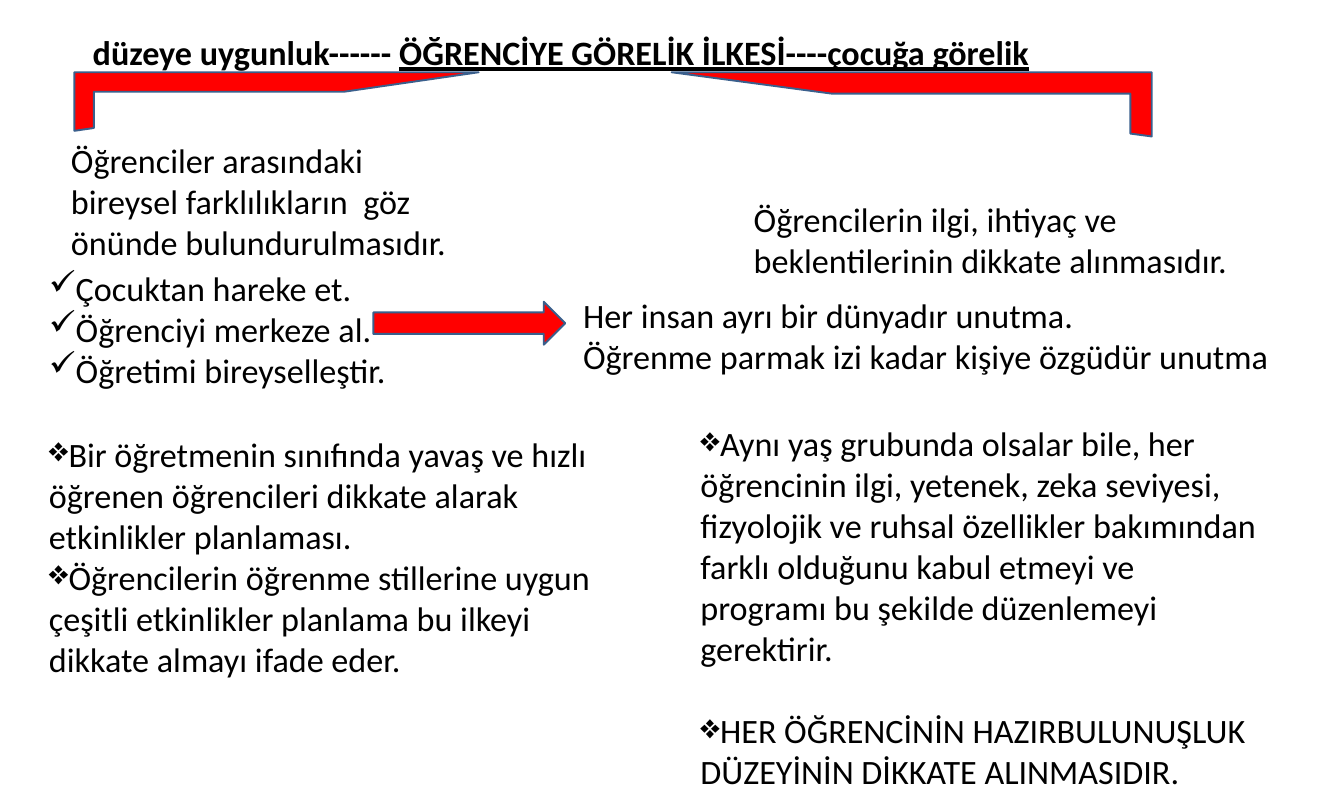
from dataclasses import dataclass

from lxml import etree
from pptx import Presentation
from pptx.dml.color import RGBColor
from pptx.enum.shapes import MSO_SHAPE
from pptx.enum.text import MSO_ANCHOR, MSO_AUTO_SIZE, PP_ALIGN
from pptx.oxml.ns import qn
from pptx.util import Cm, Pt

FRAME = MSO_SHAPE.HALF_FRAME
ARROW = MSO_SHAPE.RIGHT_ARROW
TOP = MSO_ANCHOR.TOP
LEFT = PP_ALIGN.LEFT
NO_FIT = MSO_AUTO_SIZE.NONE
TITLE_ONLY = 5
CHECK, DIAMOND = "✓", "❖"


@dataclass(frozen=True)
class Theme:
    font: str = "Calibri"
    size: Pt = Pt(36)
    edge: Pt = Pt(2)
    gap: Cm = Cm(1.55)
    ink: RGBColor = RGBColor(0, 0, 0)
    paper: RGBColor = RGBColor(255, 255, 255)
    red: RGBColor = RGBColor(255, 0, 0)
    line: RGBColor = RGBColor(0x3A, 0x5F, 0x8C)


THEME = Theme()


def add_run(para, text, bold=False, under=False):
    run = para.add_run()
    run.text = text
    font = run.font
    font.name, font.size = THEME.font, THEME.size
    font.bold, font.underline = bold, under
    font.color.rgb = THEME.ink


def set_bullet(para, mark):
    """Put the mark right before the text, with no hanging indent."""
    props = para._p.get_or_add_pPr()
    props.set("marL", "0")
    props.set("indent", "0")
    etree.SubElement(props, qn("a:buChar")).set("char", mark)


def add_title(slide, parts, box):
    title = slide.shapes.title
    title.left, title.top, title.width, title.height = map(Cm, box)
    frame = title.text_frame
    frame.margin_left = frame.margin_right = 0
    frame.margin_top = frame.margin_bottom = 0
    frame.vertical_anchor = TOP
    frame.word_wrap, frame.auto_size = True, NO_FIT
    para = frame.paragraphs[0]
    para.alignment = LEFT
    for text, under in parts:
        add_run(para, text, bold=True, under=under)


def add_note(slide, lines, box, mark=None, gap=0):
    frame = slide.shapes.add_textbox(*map(Cm, box)).text_frame
    frame.word_wrap = True
    for i, text in enumerate(lines):
        para = frame.add_paragraph() if i else frame.paragraphs[0]
        if i and gap:
            para.space_before = gap
        if mark:
            set_bullet(para, mark)
        add_run(para, text)


def add_red(slide, kind, box, flip=False):
    shape = slide.shapes.add_shape(kind, *map(Cm, box))
    shape.shadow.inherit = False
    shape.fill.solid()
    shape.fill.fore_color.rgb = THEME.red
    shape.line.color.rgb = THEME.line
    shape.line.width = THEME.edge
    if flip:
        shape.element.spPr.get_or_add_xfrm().set("flipH", "1")


def main():
    deck = Presentation()
    deck.slide_width, deck.slide_height = Cm(50), Cm(30)
    slide = deck.slides.add_slide(deck.slide_layouts[TITLE_ONLY])
    slide.background.fill.solid()
    slide.background.fill.fore_color.rgb = THEME.paper

    add_title(slide, [
        ("düzeye uygunluk------ ", False),
        ("ÖĞRENCİYE GÖRELİK İLKESİ----çocuğa görelik", True),
    ], (3.45, 1.17, 42, 1.6))

    add_red(slide, FRAME, (2.77, 2.69, 15.04, 2.18))
    add_note(slide, [
        "Öğrenciler arasındaki bireysel farklılıkların  göz önünde "
        "bulundurulmasıdır.",
    ], (2.39, 5.08, 14.88, 6.4))

    add_red(slide, FRAME, (24.99, 2.69, 17.86, 2.39), flip=True)
    add_note(slide, [
        "Öğrencilerin ilgi, ihtiyaç ve beklentilerinin dikkate alınmasıdır.",
    ], (27.79, 7.26, 19.84, 4.88))

    add_note(slide, [
        "Çocuktan hareke et.",
        "Öğrenciyi merkeze al.",
        "Öğretimi bireyselleştir.",
    ], (1.57, 9.83, 17.86, 6.4), CHECK)
    add_red(slide, ARROW, (13.89, 11.23, 7.14, 1.6))
    add_note(slide, [
        "Her insan ayrı bir dünyadır unutma.",
        "Öğrenme parmak izi kadar kişiye özgüdür unutma",
    ], (21.44, 10.85, 28.56, 3.33))

    add_note(slide, [
        "Bir öğretmenin sınıfında yavaş ve hızlı öğrenen öğrencileri dikkate "
        "alarak etkinlikler planlaması.",
        "Öğrencilerin öğrenme stillerine uygun çeşitli etkinlikler planlama "
        "bu ilkeyi dikkate almayı ifade eder.",
    ], (1.57, 16, 21.23, 9.5), DIAMOND)
    add_note(slide, [
        "Aynı yaş grubunda olsalar bile, her öğrencinin ilgi, yetenek, zeka "
        "seviyesi, fizyolojik ve ruhsal özellikler bakımından farklı olduğunu "
        "kabul etmeyi ve programı bu şekilde düzenlemeyi gerektirir.",
        "HER ÖĞRENCİNİN HAZIRBULUNUŞLUK DÜZEYİNİN DİKKATE ALINMASIDIR.",
    ], (25.81, 15.6, 21.23, 14.1), DIAMOND, THEME.gap)

    deck.save("out.pptx")


if __name__ == "__main__":
    main()
